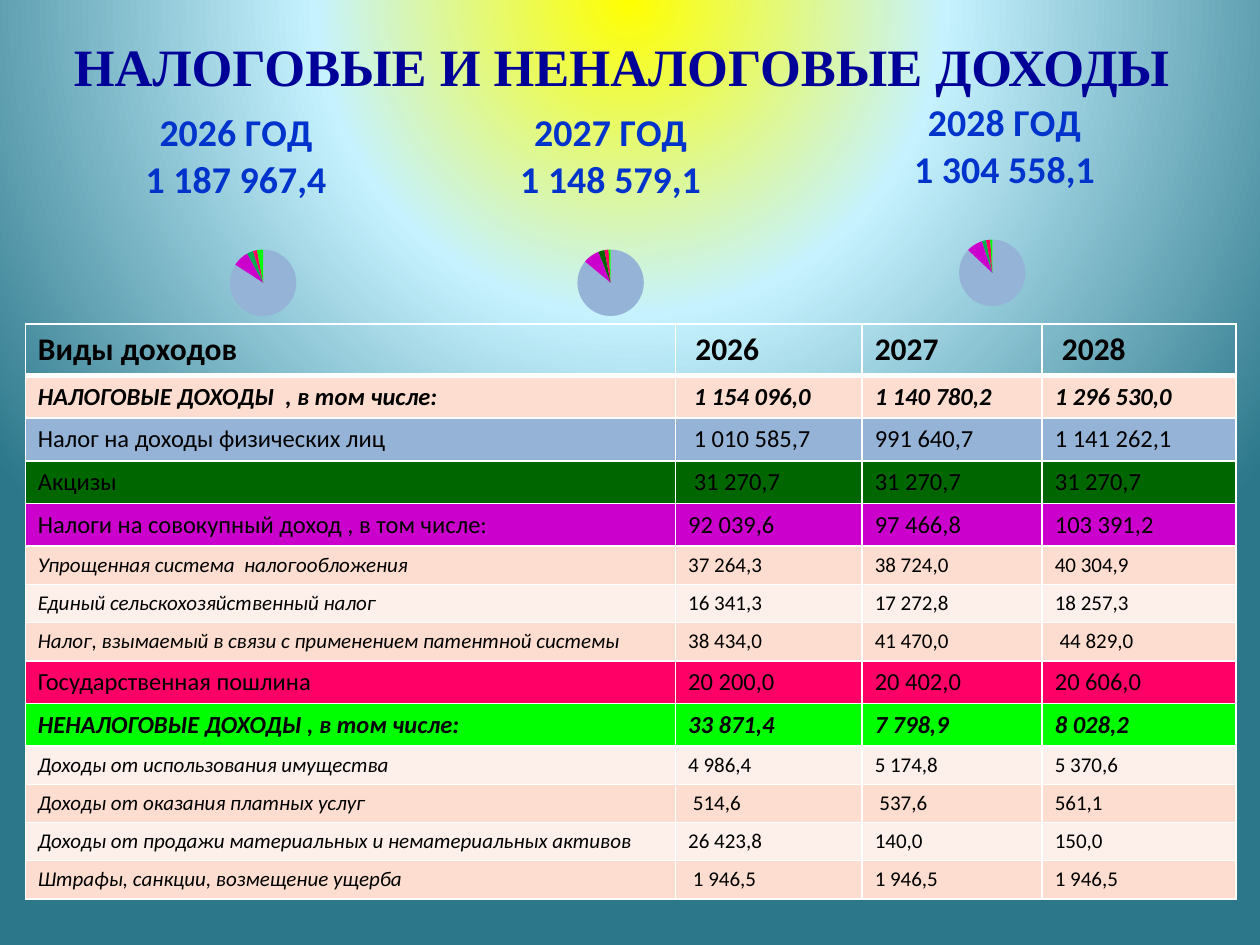
from pptx import Presentation
from pptx.chart.data import CategoryChartData
from pptx.dml.color import RGBColor
from pptx.enum.chart import XL_CHART_TYPE
from pptx.enum.text import MSO_ANCHOR, PP_ALIGN
from pptx.oxml import parse_xml
from pptx.oxml.ns import nsdecls, qn
from pptx.util import Cm, Pt

COLORS = {
    "sun": "FFFF00", "sky": "C6F2FF", "sea": "2C778A",
    "heading": "000099", "year": "0033CC", "text": "000000", "white": "FFFFFF",
    "peach": "FCDDCF", "cream": "FDEFE9", "income": "95B3D7", "excise": "006600",
    "combined": "CC00CC", "duty": "FF0066", "nontax": "00FF00", "leaf": "00B050",
}

# Row style: size in points, bold, italic label, italic values, height in cm
STYLES = {
    "header": (18, True, False, False, 1.04),
    "group": (14, True, True, True, 0.86),
    "tax": (14, False, False, False, 0.86),
    "detail": (12, False, True, False, 0.77),
}

REVENUES = [
    ("header", None, "Виды доходов", " 2026", "2027", " 2028"),
    ("group", "peach", "НАЛОГОВЫЕ ДОХОДЫ  , в том числе:",
     " 1 154 096,0", "1 140 780,2", "1 296 530,0"),
    ("tax", "income", "Налог на доходы физических лиц",
     " 1 010 585,7", "991 640,7", "1 141 262,1"),
    ("tax", "excise", "Акцизы", " 31 270,7", "31 270,7", "31 270,7"),
    ("tax", "combined", "Налоги на совокупный доход , в том числе:",
     "92 039,6", "97 466,8", "103 391,2"),
    ("detail", "peach", "Упрощенная система  налогообложения",
     "37 264,3", "38 724,0", "40 304,9"),
    ("detail", "cream", "Единый сельскохозяйственный налог",
     "16 341,3", "17 272,8", "18 257,3"),
    ("detail", "peach", "Налог, взымаемый в связи с применением патентной системы",
     "38 434,0", "41 470,0", " 44 829,0"),
    ("tax", "duty", "Государственная пошлина", "20 200,0", "20 402,0", "20 606,0"),
    ("group", "nontax", "НЕНАЛОГОВЫЕ ДОХОДЫ , в том числе:",
     "33 871,4", "7 798,9", "8 028,2"),
    ("detail", "cream", "Доходы от использования имущества",
     "4 986,4", "5 174,8", "5 370,6"),
    ("detail", "peach", "Доходы от оказания платных услуг", " 514,6", " 537,6", "561,1"),
    ("detail", "cream", "Доходы от продажи материальных и нематериальных активов",
     "26 423,8", "140,0", "150,0"),
    ("detail", "peach", "Штрафы, санкции, возмещение ущерба",
     " 1 946,5", "1 946,5", "1 946,5"),
]
COLUMN_WIDTHS = (13.11, 3.76, 3.63, 3.91)

# Box in cm, left edge of the heading within it, heading lines, shares, third slice
YEARS = [
    ((0.71, 1.32, 9.19, 5.41), 2.15, ("2026 ГОД", "1 187 967,4"), (85, 8, 3, 2, 3), "leaf"),
    ((8.31, 1.32, 8.0, 5.41), 2.1, ("2027 ГОД", "1 148 579,1"), (86, 8, 3, 2, 1), "excise"),
    ((15.7, 1.12, 8.61, 5.41), 2.65, ("2028 ГОД", "1 304 558,1"), (87, 8, 2, 2, 1), "leaf"),
]
PIE_DIAMETER = 1.34
PIE_CENTER = (0.5, 0.81)


def rgb(name):
    return RGBColor.from_string(COLORS[name])


def style_font(font, size, color, bold=False, italic=False, face="Calibri"):
    font.name, font.size, font.bold, font.italic = face, Pt(size), bold, italic
    font.color.rgb = rgb(color)


def paint_background(slide):
    slide.background.fill.gradient()
    gradient = slide.element.find(".//" + qn("a:gradFill"))
    stops = "".join(
        f'<a:gs pos="{position * 1000}"><a:srgbClr val="{COLORS[name]}"/></a:gs>'
        for position, name in ((0, "sun"), (40, "sky"), (100, "sea")))
    gradient.getparent().replace(gradient, parse_xml(
        f'<a:gradFill {nsdecls("a")} rotWithShape="1"><a:gsLst>{stops}</a:gsLst>'
        '<a:path path="circle"><a:fillToRect l="50000" t="-80000" r="50000" b="180000"/>'
        '</a:path></a:gradFill>'))


def add_heading(slide, left, top, width, height):
    frame = slide.shapes.add_textbox(Cm(left), Cm(top), Cm(width), Cm(height)).text_frame
    frame.word_wrap = True
    frame.vertical_anchor = MSO_ANCHOR.MIDDLE
    frame.margin_left = Cm(0.78)
    frame.text = "НАЛОГОВЫЕ И НЕНАЛОГОВЫЕ ДОХОДЫ"
    style_font(frame.paragraphs[0].runs[0].font, 30, "heading", True, face="Times New Roman")


def add_borders(cell, top, bottom):
    properties = cell._tc.get_or_add_tcPr()
    for side, points in (("L", 1), ("R", 1), ("T", top), ("B", bottom)):
        properties.append(parse_xml(
            f'<a:ln{side} {nsdecls("a")} w="{Pt(points)}"><a:solidFill>'
            f'<a:srgbClr val="{COLORS["white"]}"/></a:solidFill></a:ln{side}>'))


def add_revenue_table(slide, left, top):
    height = sum(STYLES[row[0]][-1] for row in REVENUES)
    table = slide.shapes.add_table(
        len(REVENUES), len(COLUMN_WIDTHS), Cm(left), Cm(top),
        Cm(sum(COLUMN_WIDTHS)), Cm(height)).table
    table.first_row = table.horz_banding = False
    for column, width in zip(table.columns, COLUMN_WIDTHS):
        column.width = Cm(width)
    for r, (style, fill, *entries) in enumerate(REVENUES):
        size, bold, label_italic, value_italic, row_height = STYLES[style]
        table.rows[r].height = Cm(row_height)
        for c, entry in enumerate(entries):
            cell = table.cell(r, c)
            add_borders(cell, top=3 if r == 1 else 1, bottom=3 if r == 0 else 1)
            if fill:
                cell.fill.solid()
                cell.fill.fore_color.rgb = rgb(fill)
            else:
                cell.fill.background()
            cell.text_frame.text = entry
            style_font(cell.text_frame.paragraphs[0].runs[0].font, size, "text", bold,
                       value_italic if c else label_italic)


def set_layout(element, index, **fractions):
    """Give a chart part a manual position, in fractions of the chart."""
    for old in element.findall(qn("c:layout")):
        element.remove(old)
    target = '<c:layoutTarget val="inner"/>' if "w" in fractions else ""
    modes = '<c:xMode val="edge"/><c:yMode val="edge"/>'
    places = "".join(f'<c:{key} val="{value:.4f}"/>' for key, value in fractions.items())
    element.insert(index, parse_xml(
        f'<c:layout {nsdecls("c")}><c:manualLayout>{target}{modes}{places}'
        '</c:manualLayout></c:layout>'))


def add_year_pie(slide, box, heading_left, heading, shares, third_color):
    left, top, width, height = box
    data = CategoryChartData()
    data.categories = ["1", "2", "3", "4"] + [""] * (len(shares) - 4)
    data.add_series("Series 1", shares)
    chart = slide.shapes.add_chart(
        XL_CHART_TYPE.PIE, Cm(left), Cm(top), Cm(width), Cm(height), data).chart
    chart.has_legend = False
    style_font(chart.font, 18, "white")
    chart.element.find(qn("c:chart")).addnext(parse_xml(
        f'<c:spPr {nsdecls("c", "a")}><a:noFill/><a:ln><a:noFill/></a:ln></c:spPr>'))

    frame = chart.chart_title.text_frame
    frame.text = "\n".join(heading)
    for paragraph in frame.paragraphs:
        paragraph.alignment = PP_ALIGN.CENTER
        style_font(paragraph.runs[0].font, 21.6, "year", True)
    set_layout(chart.chart_title.element, 1, x=heading_left / width, y=0.76 / height)

    pie_w, pie_h = PIE_DIAMETER / width, PIE_DIAMETER / height
    set_layout(chart.element.find(".//" + qn("c:plotArea")), 0,
               x=PIE_CENTER[0] - pie_w / 2, y=PIE_CENTER[1] - pie_h / 2, w=pie_w, h=pie_h)

    plot = chart.plots[0]
    plot.vary_by_categories = False
    for i, color in enumerate(("income", "combined", third_color, "duty", "nontax")):
        slice_format = plot.series[0].points[i].format
        slice_format.fill.solid()
        slice_format.fill.fore_color.rgb = rgb(color)
        slice_format.line.fill.background()


def main():
    presentation = Presentation()
    presentation.slide_width, presentation.slide_height = Cm(25.4), Cm(19.05)
    slide = presentation.slides.add_slide(presentation.slide_layouts[6])
    paint_background(slide)
    add_heading(slide, 0.71, 0.53, 25.7, 1.6)
    add_revenue_table(slide, 0.51, 6.53)
    for year in YEARS:
        add_year_pie(slide, *year)
    presentation.save("out.pptx")


if __name__ == "__main__":
    main()
